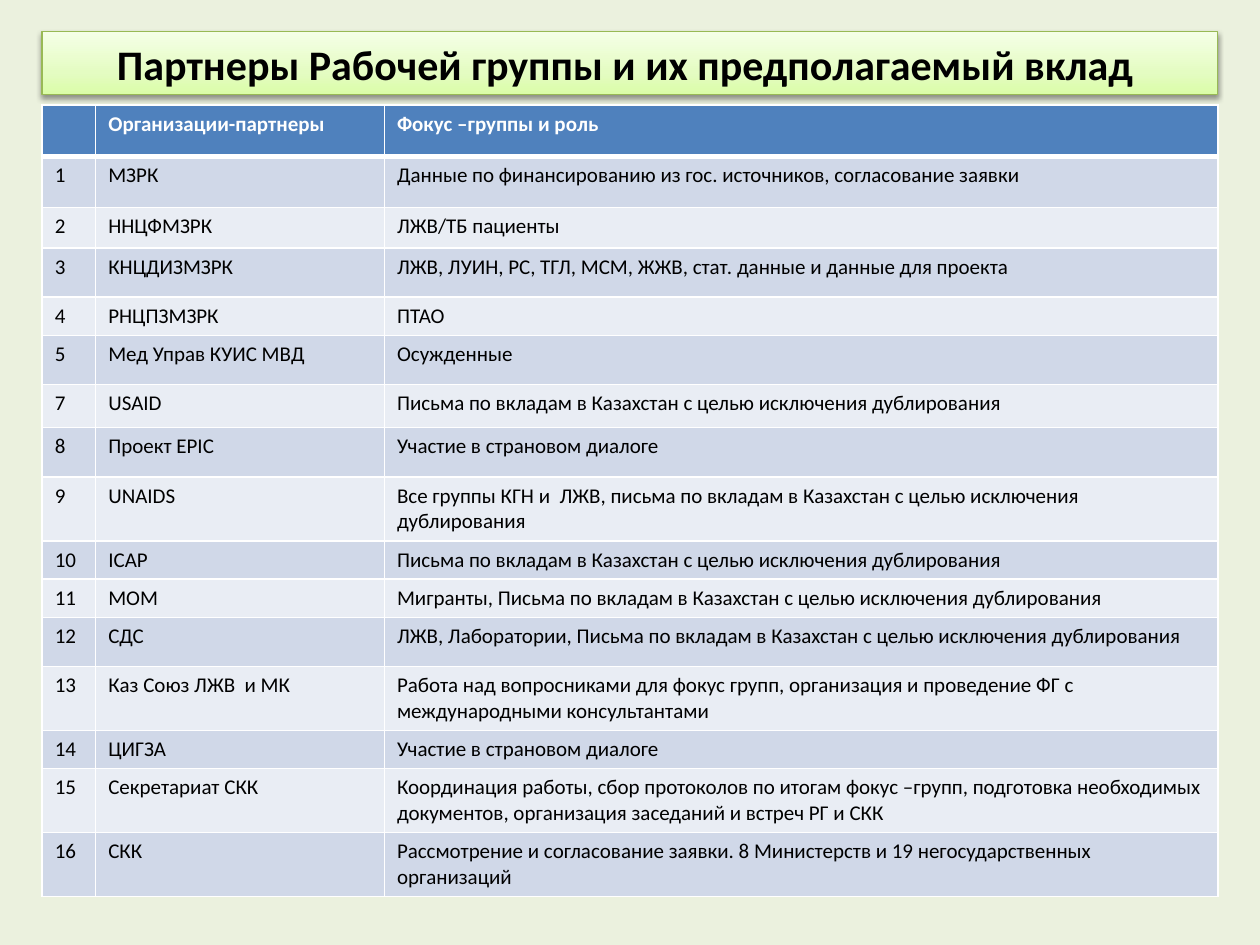
from copy import deepcopy

from lxml.etree import SubElement
from pptx import Presentation
from pptx.dml.color import RGBColor
from pptx.enum.shapes import MSO_SHAPE
from pptx.enum.text import MSO_ANCHOR, PP_ALIGN
from pptx.oxml.ns import qn
from pptx.util import Cm, Pt

BACKGROUND = RGBColor(0xEB, 0xF1, 0xDE)
BLACK = RGBColor(0x00, 0x00, 0x00)
WHITE = RGBColor(0xFF, 0xFF, 0xFF)
HEADER_BLUE = RGBColor(0x4F, 0x81, 0xBD)
BAND_DARK = RGBColor(0xD0, 0xD8, 0xE8)
BAND_LIGHT = RGBColor(0xE9, 0xED, 0xF4)
TITLE_LINE = RGBColor(0x98, 0xB9, 0x55)
TITLE_STOPS = [
    (0, RGBColor(0xDA, 0xFD, 0xA7)),
    (0.35, RGBColor(0xE4, 0xFC, 0xC2)),
    (1, RGBColor(0xF5, 0xFF, 0xE7)),
]

TITLE = "Партнеры Рабочей группы и их предполагаемый вклад "
LETTERS = "Письма по вкладам в Казахстан с целью исключения дублирования"
DIALOGUE = "Участие в страновом диалоге"
COLUMN_WIDTHS = [1.08, 5.82, 16.8]
PARTNER_ROWS = [
    (1.03, "", "Организации-партнеры", "Фокус –группы и роль"),
    (1.03, "1", "МЗРК", "Данные по финансированию из гос. источников, согласование заявки"),
    (0.82, "2", "ННЦФМЗРК", "ЛЖВ/ТБ пациенты"),
    (0.99, "3", "КНЦДИЗМЗРК", "ЛЖВ, ЛУИН, РС, ТГЛ, МСМ, ЖЖВ, стат. данные и данные для проекта"),
    (0.77, "4", "РНЦПЗМЗРК", "ПТАО"),
    (0.99, "5", "Мед Управ КУИС МВД", "Осужденные"),
    (0.87, "7", "USAID", LETTERS),
    (0.99, "8", "Проект EPIC", DIALOGUE),
    (1.29, "9", "UNAIDS", "Все группы КГН и  ЛЖВ, письма по вкладам в Казахстан "
                           "с целью исключения дублирования"),
    (0.77, "10", "ICAP", LETTERS),
    (0.77, "11", "МОМ", f"Мигранты, {LETTERS}"),
    (0.99, "12", "СДС", f"ЛЖВ, Лаборатории, {LETTERS}"),
    (1.29, "13", "Каз Союз ЛЖВ  и МК", "Работа над вопросниками для фокус групп, организация "
                                        "и проведение ФГ с международными консультантами"),
    (0.77, "14", "ЦИГЗА", DIALOGUE),
    (1.29, "15", "Секретариат СКК", "Координация работы, сбор протоколов по итогам фокус –групп, "
                                     "подготовка необходимых документов, организация заседаний "
                                     "и встреч РГ и СКК"),
    (1.29, "16", "СКК", "Рассмотрение и согласование заявки. 8 Министерств и 19 "
                         "негосударственных организаций"),
]


def write_text(frame, text, size=12, color=BLACK, bold=False, align=PP_ALIGN.LEFT):
    """Write one formatted paragraph into a text frame."""
    para = frame.paragraphs[0]
    para.alignment = align
    para.font.size = Pt(size)
    if not text:
        return
    span = para.add_run()
    span.text = text
    span.font.name = "Calibri"
    span.font.size = Pt(size)
    span.font.bold = bold
    span.font.color.rgb = color


def add_shadow(shape):
    """Give a shape a soft shadow straight below it."""
    shape.shadow.inherit = False
    effects = shape._element.spPr.find(qn("a:effectLst"))
    shadow = SubElement(effects, qn("a:outerShdw"), blurRad="40000", dist="20000",
                        dir="5400000", rotWithShape="0")
    color = SubElement(shadow, qn("a:srgbClr"), val=str(BLACK))
    SubElement(color, qn("a:alpha"), val="38000")


def fill_gradient(shape, stops, angle):
    """Fill a shape with a linear gradient of the given stops."""
    shape.fill.gradient()
    shape.fill.gradient_angle = angle
    stop_list = shape._element.spPr.find(qn("a:gradFill")).find(qn("a:gsLst"))
    while len(stop_list) < len(stops):
        stop_list.append(deepcopy(stop_list[0]))
    for stop, (position, color) in zip(shape.fill.gradient_stops, stops):
        stop.position = position
        stop.color.rgb = color


def add_title(page, left, top, width, height):
    """Place the title bar in the given box."""
    box = page.shapes.add_shape(MSO_SHAPE.RECTANGLE, left, top, width, height)
    fill_gradient(box, TITLE_STOPS, 90)
    box.line.color.rgb = TITLE_LINE
    box.line.width = Pt(0.75)
    add_shadow(box)
    frame = box.text_frame
    frame.word_wrap = True
    frame.vertical_anchor = MSO_ANCHOR.MIDDLE
    write_text(frame, TITLE, size=24, bold=True, align=PP_ALIGN.CENTER)


def add_borders(cell, **widths):
    """Draw white borders on a cell, with widths in points by side."""
    properties = cell._tc.get_or_add_tcPr()
    for index, side in enumerate("LRTB"):
        line = SubElement(properties, qn(f"a:ln{side}"), w=str(Pt(widths.get(side, 1))))
        fill = SubElement(line, qn("a:solidFill"))
        SubElement(fill, qn("a:srgbClr"), val=str(WHITE))
        properties.insert(index, line)


def add_partner_table(page, left, top, width):
    """Place the banded table of partners with its top left corner as given."""
    height = Cm(sum(row[0] for row in PARTNER_ROWS))
    table = page.shapes.add_table(len(PARTNER_ROWS), len(COLUMN_WIDTHS),
                                  left, top, width, height).table
    for column, column_width in zip(table.columns, COLUMN_WIDTHS):
        column.width = Cm(column_width)
    for index, (row_height, *texts) in enumerate(PARTNER_ROWS):
        table.rows[index].height = Cm(row_height)
        header = index == 0
        band = BAND_DARK if index % 2 else BAND_LIGHT
        for cell, text in zip(table.rows[index].cells, texts):
            cell.fill.solid()
            cell.fill.fore_color.rgb = HEADER_BLUE if header else band
            add_borders(cell, T=3 if index == 1 else 1, B=3 if header else 1)
            write_text(cell.text_frame, text, color=WHITE if header else BLACK, bold=header)


def main():
    """Build the slide and save the deck."""
    deck = Presentation()
    deck.slide_width, deck.slide_height = Cm(25.4), Cm(19.05)
    page = deck.slides.add_slide(deck.slide_layouts[6])
    page.background.fill.solid()
    page.background.fill.fore_color.rgb = BACKGROUND
    left, width = Cm(0.85), Cm(sum(COLUMN_WIDTHS))
    add_title(page, left, Cm(0.64), width, Cm(1.27))
    add_partner_table(page, left, Cm(2.12), width)
    deck.save("out.pptx")


if __name__ == "__main__":
    main()
